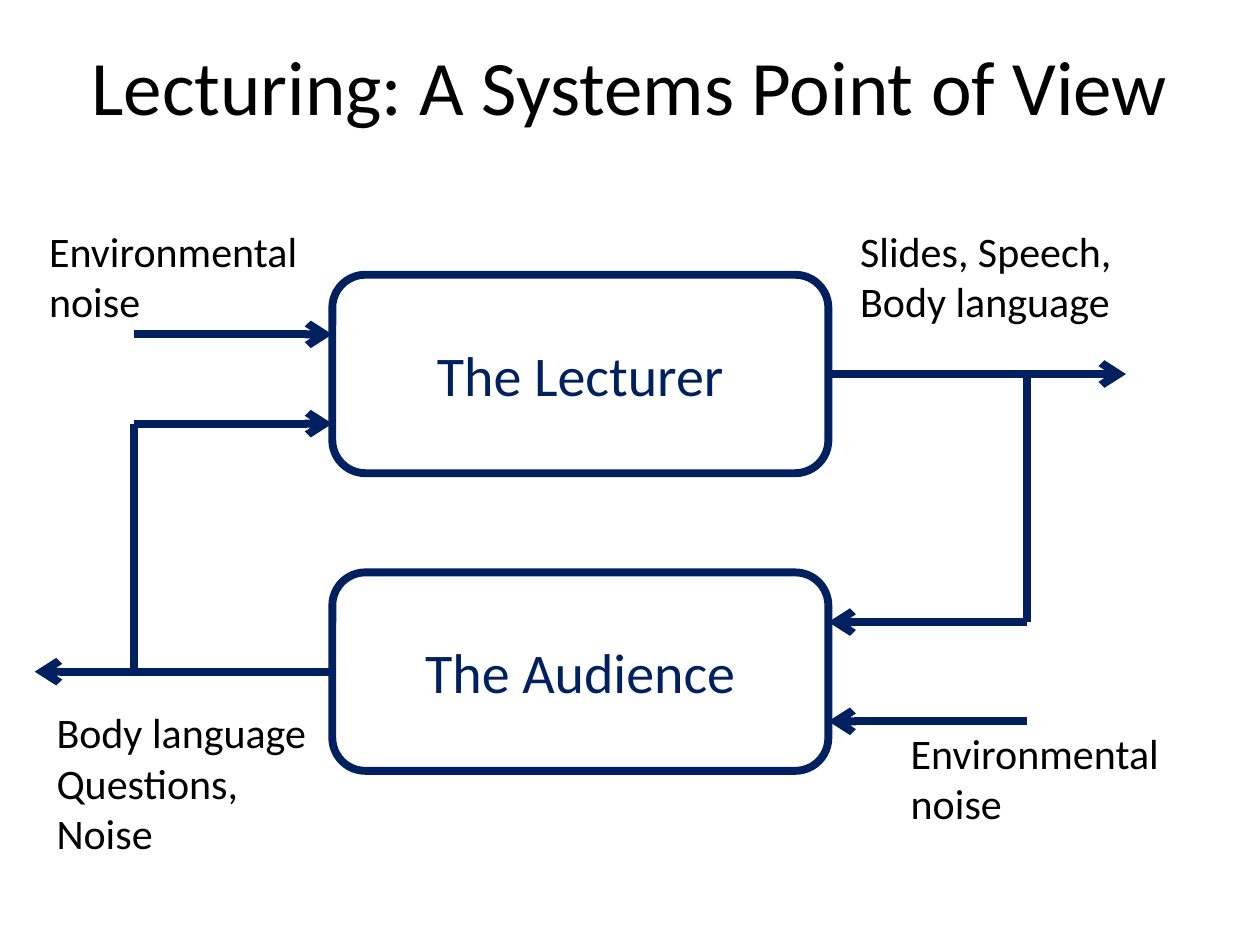
"""Builds a slide showing lecturer and audience as a feedback system."""
import pptx
import pptx.dml.color
import pptx.enum.shapes
import pptx.enum.text
import pptx.oxml.ns
import pptx.util
from lxml import etree

COLORS = {"navy": "002060", "ink": "000000"}
ALIGN = pptx.enum.text.PP_ALIGN
ANCHOR = pptx.enum.text.MSO_ANCHOR


def rgb(name):
    return pptx.dml.color.RGBColor.from_string(COLORS[name])


def write(frame, text, size=24, color="ink", align=ALIGN.LEFT, anchor=ANCHOR.TOP, wrap=True):
    frame.text = text
    frame.word_wrap = wrap
    frame.vertical_anchor = anchor
    for paragraph in frame.paragraphs:
        paragraph.alignment = align
        for run in paragraph.runs:
            run.font.name = "Calibri"
            run.font.size = pptx.util.Pt(size)
            run.font.color.rgb = rgb(color)


class SystemSlide:
    CELL = pptx.util.Cm(1)
    LEFT = pptx.util.Cm(0.7)
    TOP = pptx.util.Cm(5.54)
    STROKE = pptx.util.Pt(4.5)

    def __init__(self, deck):
        self.width, self.height = deck.slide_width, deck.slide_height
        self.slide = deck.slides.add_slide(deck.slide_layouts[5])
        self.shapes = self.slide.shapes

    def point(self, column, row):
        return round(self.LEFT + column * self.CELL), round(self.TOP + row * self.CELL)

    def area(self, column, row, columns, rows):
        return *self.point(column, row), round(columns * self.CELL), round(rows * self.CELL)

    def title(self, text):
        heading = self.shapes.title
        heading.left, heading.top = round(0.05 * self.width), round(0.01 * self.height)
        heading.width, heading.height = round(0.9 * self.width), round(0.16 * self.height)
        write(heading.text_frame, text, size=44, align=ALIGN.CENTER, anchor=ANCHOR.MIDDLE)

    def block(self, text, row):
        block = self.shapes.add_shape(
            pptx.enum.shapes.MSO_SHAPE.ROUNDED_RECTANGLE, *self.area(6, row, 10, 4))
        block.shadow.inherit = False
        block.fill.background()
        block.line.color.rgb = rgb("navy")
        block.line.width = self.STROKE
        write(block.text_frame, text, size=32, color="navy",
              align=ALIGN.CENTER, anchor=ANCHOR.MIDDLE)
        return block

    def label(self, text, column, row, columns=5.56, rows=2.31):
        box = self.shapes.add_textbox(*self.area(column, row, columns, rows))
        write(box.text_frame, text, wrap=False)
        box.text_frame.auto_size = pptx.enum.text.MSO_AUTO_SIZE.SHAPE_TO_FIT_TEXT

    def line(self, start, end, arrow=None):
        signal = self.shapes.add_connector(
            pptx.enum.shapes.MSO_CONNECTOR.STRAIGHT, *self.point(*start), *self.point(*end))
        signal.line.color.rgb = rgb("navy")
        signal.line.width = self.STROKE
        if arrow:
            etree.SubElement(signal.line._get_or_add_ln(),
                             pptx.oxml.ns.qn(f"a:{arrow}End"), type="arrow")
        etree.SubElement(signal._element.spPr, pptx.oxml.ns.qn("a:effectLst"))
        return signal


def main():
    deck = pptx.Presentation()
    deck.slide_width, deck.slide_height = pptx.util.Inches(10), pptx.util.Inches(7.5)
    page = SystemSlide(deck)
    page.title("Lecturing: A Systems Point of View")

    lecturer = page.block("The Lecturer", 0)
    audience = page.block("The Audience", 6)

    page.line((16, 2), (22, 2), "tail").begin_connect(lecturer, 3)
    page.line((0, 8), (6, 8), "head").end_connect(audience, 1)
    for row in (1.2, 3):
        page.line((2, row), (6, row), "tail")
    for row in (7, 9):
        page.line((16, row), (20, row), "head")
    page.line((2, 8), (2, 3))
    page.line((20, 7), (20, 2))

    page.label("Slides, Speech,\nBody language", 16.39, -1.12, columns=5.64)
    page.label("Body language\vQuestions,\vNoise", 0.19, 8.58, rows=3.33)
    for column, row in ((17.41, 9), (0.04, -1.12)):
        page.label("Environmental\nnoise", column, row)

    deck.save("out.pptx")


if __name__ == "__main__":
    main()
